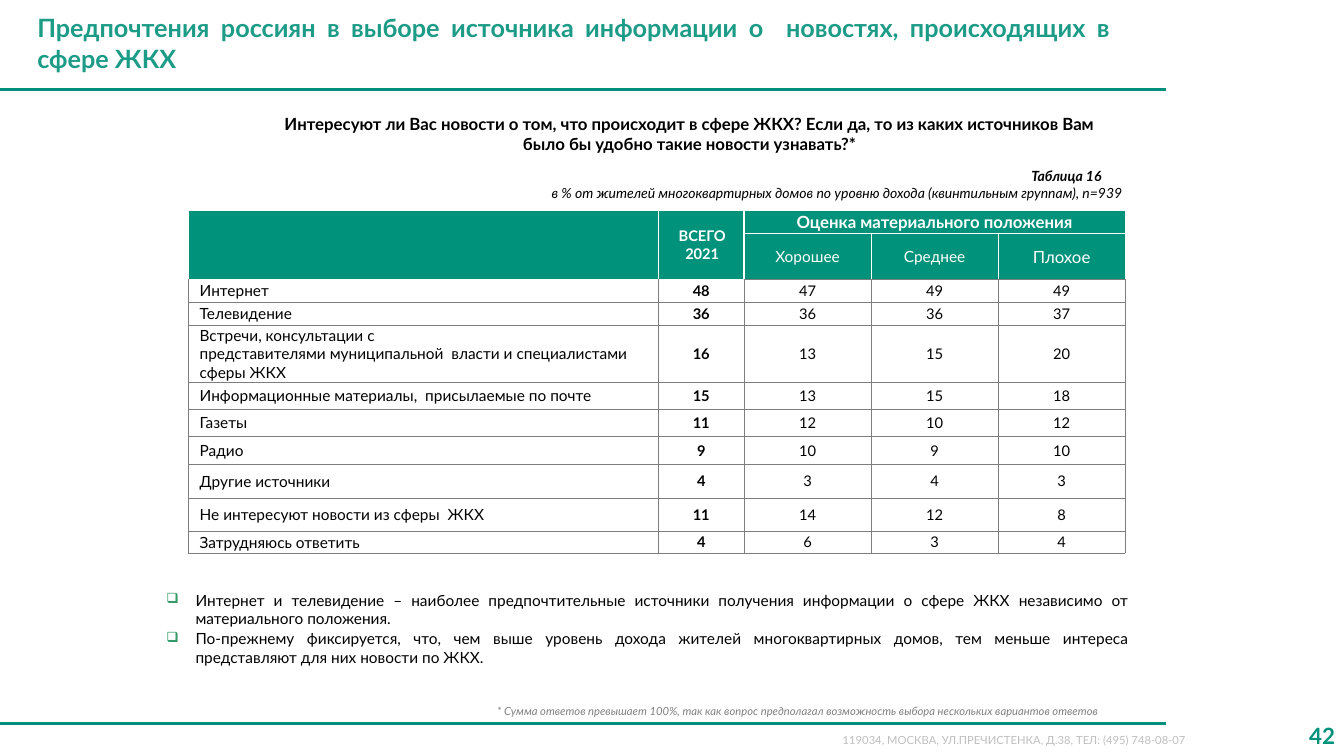
from dataclasses import dataclass

from lxml.etree import SubElement
from pptx import Presentation
from pptx.dml.color import RGBColor
from pptx.enum.shapes import MSO_CONNECTOR
from pptx.enum.text import MSO_ANCHOR, MSO_AUTO_SIZE, PP_ALIGN
from pptx.oxml import parse_xml
from pptx.oxml.ns import nsdecls, qn
from pptx.slide import Slide
from pptx.table import _Cell
from pptx.text.text import TextFrame
from pptx.util import Inches, Pt

COLORS = {
    "rule": "008F7D", "header": "00927A", "number": "00927B", "title": "1C9B87",
    "bullet": "339966", "grid": "7E7E7E", "note": "808080", "address": "BFBFBF",
    "text": "000000", "white": "FFFFFF",
}


@dataclass(frozen=True)
class Style:
    """Look of a piece of text."""
    size: float
    color: str = "text"
    bold: bool = False
    italic: bool = False
    align: PP_ALIGN = PP_ALIGN.LEFT
    anchor: MSO_ANCHOR = MSO_ANCHOR.TOP
    insets: tuple[float, float, float, float] = (0, 0.01, 0, 0)


@dataclass(frozen=True)
class Caption:
    """Free-standing text with its box in inches."""
    text: str
    box: tuple[float, float, float, float]
    style: Style


@dataclass(frozen=True)
class Source:
    """Table row: an information source, its shares and its row height."""
    name: str
    shares: tuple[int, int, int, int]
    height: float


TITLE = Caption(
    "Предпочтения россиян в выборе источника информации о  новостях, происходящих в сфере ЖКХ",
    (0.27, 0, 10.84, 0.85),
    Style(18, "title", True, align=PP_ALIGN.JUSTIFY, anchor=MSO_ANCHOR.MIDDLE, insets=(0.1, 0.05, 0.1, 0.05)),
)
CAPTIONS = [
    Caption("119034, МОСКВА, УЛ.ПРЕЧИСТЕНКА, Д.38, ТЕЛ: (495) 748-08-07", (8.26, 7.23, 3.84, 0.24),
            Style(8, "address", insets=(0.1, 0.05, 0.1, 0.05))),
    Caption("42", (12.65, 7.1, 0.69, 0.4),
            Style(16, "number", True, align=PP_ALIGN.RIGHT, anchor=MSO_ANCHOR.MIDDLE, insets=(0.1, 0.05, 0.1, 0.05))),
    Caption("* Сумма ответов превышает 100%, так как вопрос предполагал возможность выбора нескольких вариантов ответов",
            (4.93, 6.99, 6.43, 0.14), Style(8, "note", italic=True, insets=(0, 0, 0, 0))),
    Caption("Таблица 16", (10.23, 1.65, 0.81, 0.18), Style(10, bold=True, italic=True)),
    Caption("в % от жителей многоквартирных домов по уровню дохода (квинтильным группам), n=939",
            (5.47, 1.82, 6.08, 0.18), Style(10, italic=True)),
    Caption("Интересуют ли Вас новости о том, что происходит в сфере ЖКХ? Если да, то из каких источников Вам\n"
            "было бы удобно такие новости узнавать?*",
            (2.49, 1.12, 8.7, 0.42), Style(12, bold=True, align=PP_ALIGN.CENTER)),
]
FINDINGS = Caption(
    "Интернет и телевидение – наиболее предпочтительные источники получения информации о сфере ЖКХ "
    "независимо от материального положения.\n"
    "По-прежнему фиксируется, что, чем выше уровень дохода жителей многоквартирных домов, тем меньше "
    "интереса представляют для них новости по ЖКХ.",
    (1.63, 5.85, 9.57, 0.77), Style(11, align=PP_ALIGN.JUSTIFY),
)
SOURCES = [
    Source("Интернет", (48, 47, 49, 49), 0.23),
    Source("Телевидение", (36, 36, 36, 37), 0.23),
    Source("Встречи, консультации с\nпредставителями муниципальной  власти и специалистами сферы ЖКХ",
           (16, 13, 15, 20), 0.56),
    Source("Информационные материалы,  присылаемые по почте", (15, 13, 15, 18), 0.27),
    Source("Газеты", (11, 12, 10, 12), 0.27),
    Source("Радио", (9, 10, 9, 10), 0.28),
    Source("Другие источники", (4, 3, 4, 3), 0.33),
    Source("Не интересуют новости из сферы  ЖКХ", (11, 14, 12, 8), 0.33),
    Source("Затрудняюсь ответить", (4, 6, 3, 4), 0.22),
]
HEADER_HEIGHTS = (0.23, 0.45)
COLUMN_WIDTHS = (4.66, 0.85, 1.26, 1.26, 1.26)
GRADES = (("Хорошее", 11), ("Среднее", 11), ("Плохое", 12))
RULE_LEVELS = (0.89, 7.18)


def rgb(name: str) -> RGBColor:
    """Look up a named colour."""
    return RGBColor.from_string(COLORS[name])


def format_text(frame: TextFrame, style: Style) -> None:
    """Apply a style to every paragraph and run."""
    for paragraph in frame.paragraphs:
        paragraph.alignment = style.align
        for run in paragraph.runs:
            run.font.name = "Lato"
            run.font.size = Pt(style.size)
            run.font.bold = style.bold
            run.font.italic = style.italic
            run.font.color.rgb = rgb(style.color)


def fill_frame(frame: TextFrame, caption: Caption) -> None:
    """Write a caption into a text frame."""
    style = caption.style
    frame.text = caption.text
    frame.word_wrap = True
    frame.auto_size = MSO_AUTO_SIZE.NONE
    frame.vertical_anchor = style.anchor
    frame.margin_left, frame.margin_top, frame.margin_right, frame.margin_bottom = map(Inches, style.insets)
    format_text(frame, style)


def add_caption(slide: Slide, caption: Caption) -> TextFrame:
    """Place a caption in its own text box."""
    frame = slide.shapes.add_textbox(*map(Inches, caption.box)).text_frame
    fill_frame(frame, caption)
    return frame


def add_title(slide: Slide) -> None:
    """Move and format the title placeholder."""
    heading = slide.shapes.title
    heading.left, heading.top, heading.width, heading.height = map(Inches, TITLE.box)
    fill_frame(heading.text_frame, TITLE)


def add_rule(slide: Slide, level: float) -> None:
    """Draw a horizontal rule at a height in inches."""
    rule = slide.shapes.add_connector(
        MSO_CONNECTOR.STRAIGHT, Inches(0), Inches(level), Inches(11.56), Inches(level))
    rule.line.color.rgb = rgb("rule")
    rule.line.width = Pt(2)
    SubElement(rule.element.spPr, qn("a:effectLst"))


def add_findings(slide: Slide) -> None:
    """Place the bulleted findings below the table."""
    for index, finding in enumerate(add_caption(slide, FINDINGS).paragraphs):
        properties = finding._p.get_or_add_pPr()
        properties.set("marL", str(Inches(0.31)))
        properties.set("indent", str(Inches(-0.29)))
        bullet_color = SubElement(properties, qn("a:buClr"))
        SubElement(bullet_color, qn("a:srgbClr"), val=COLORS["bullet"])
        SubElement(properties, qn("a:buSzPct"), val="91000")
        SubElement(properties, qn("a:buChar"), char="❑")
        if index:
            finding.space_before = Pt(1.4)


def set_borders(cell: _Cell, sides: dict[str, tuple[str, float]]) -> None:
    """Give each side of a cell a colour and a width in points."""
    properties = cell._tc.get_or_add_tcPr()
    for position, side in enumerate("LRTB"):
        color, width = sides[side]
        properties.insert(position, parse_xml(
            f'<a:ln{side} {nsdecls("a")} w="{Pt(width)}"><a:solidFill>'
            f'<a:srgbClr val="{COLORS[color]}"/></a:solidFill></a:ln{side}>'))


def write_cell(cell: _Cell, text: str, style: Style, indent: float = 0) -> None:
    """Write centred-by-height text into a cell."""
    cell.text = text
    cell.vertical_anchor = MSO_ANCHOR.MIDDLE
    cell.margin_left = Inches(indent)
    cell.margin_top = cell.margin_right = cell.margin_bottom = 0
    format_text(cell.text_frame, style)


def add_source_table(slide: Slide) -> None:
    """Build the table of information sources by material position."""
    heights = (*HEADER_HEIGHTS, *(source.height for source in SOURCES))
    table = slide.shapes.add_table(
        len(heights), len(COLUMN_WIDTHS), Inches(1.87), Inches(2.09),
        Inches(sum(COLUMN_WIDTHS)), Inches(sum(heights))).table
    table.first_row = table.horz_banding = False
    for column, width in zip(table.columns, COLUMN_WIDTHS):
        column.width = Inches(width)
    for level, (row, height) in enumerate(zip(table.rows, heights)):
        row.height = Inches(height)
        for cell in row.cells:
            write_cell(cell, "", Style(10))
            if level < len(HEADER_HEIGHTS):
                cell.fill.solid()
                cell.fill.fore_color.rgb = rgb("header")
                sides = dict.fromkeys("LRTB", ("white", 1))
                if level == 1:
                    sides["B"] = ("grid", 0.25)
            else:
                cell.fill.background()
                sides = dict.fromkeys("LRTB", ("grid", 0.25))
            set_borders(cell, sides)
    table.cell(0, 0).merge(table.cell(1, 0))
    table.cell(0, 1).merge(table.cell(1, 1))
    table.cell(0, 2).merge(table.cell(0, 4))
    center = PP_ALIGN.CENTER
    write_cell(table.cell(0, 1), "ВСЕГО\n2021", Style(10.5, "white", True, align=center), 0.02)
    write_cell(table.cell(0, 2), "Оценка материального положения", Style(12, "white", True, align=center))
    for column, (grade, size) in enumerate(GRADES, 2):
        write_cell(table.cell(1, column), grade, Style(size, "white", align=center))
    for level, source in enumerate(SOURCES, len(HEADER_HEIGHTS)):
        write_cell(table.cell(level, 0), source.name, Style(11), 0.11)
        for column, share in enumerate(source.shares, 1):
            write_cell(table.cell(level, column), str(share), Style(10.5, bold=column == 1, align=center))


def main() -> None:
    """Build and save the slide."""
    deck = Presentation()
    deck.slide_width, deck.slide_height = Inches(13.33), Inches(7.5)
    slide = deck.slides.add_slide(deck.slide_layouts[5])
    for level in RULE_LEVELS:
        add_rule(slide, level)
    add_title(slide)
    for caption in CAPTIONS:
        add_caption(slide, caption)
    add_findings(slide)
    add_source_table(slide)
    deck.save("out.pptx")


if __name__ == "__main__":
    main()
